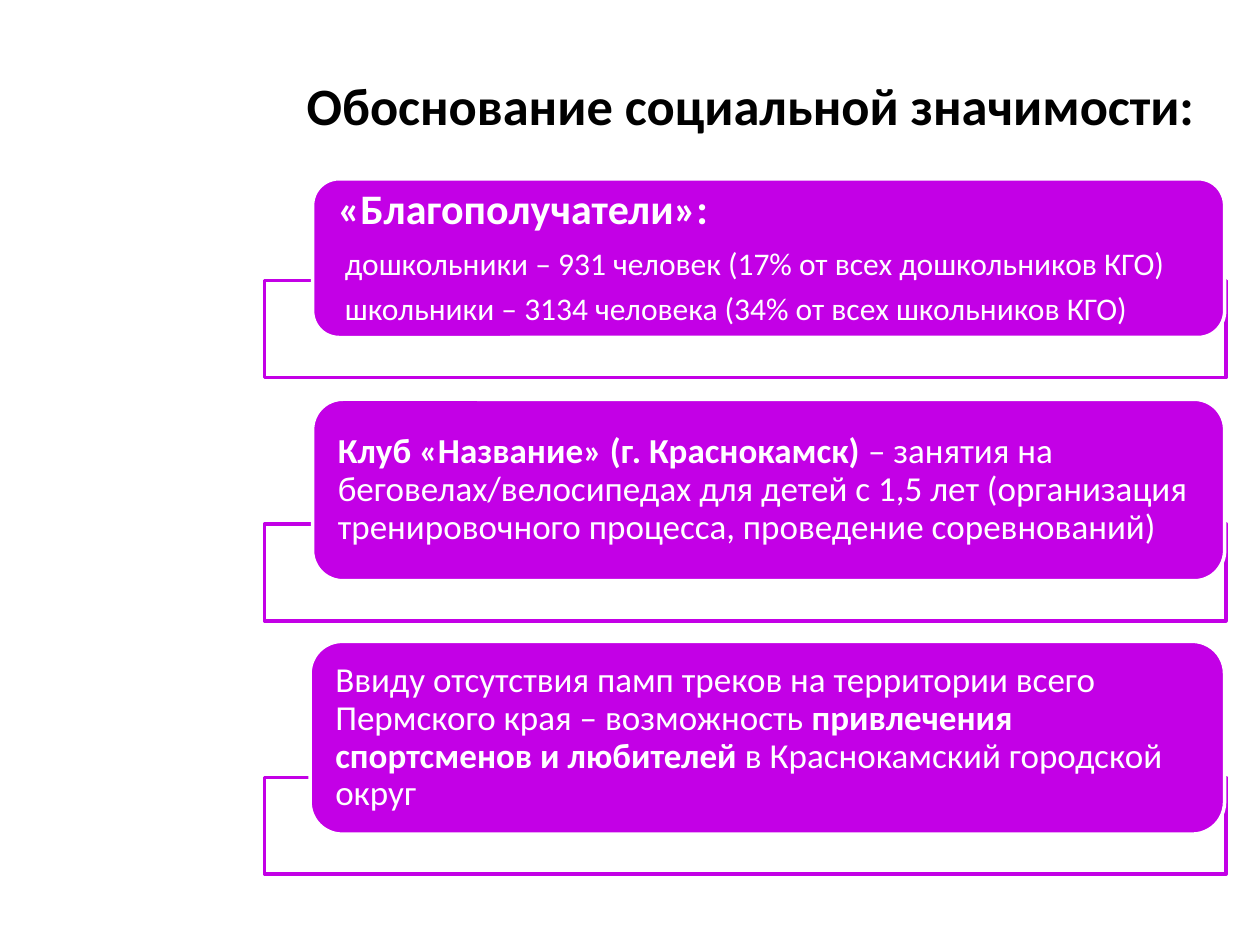
from pptx import Presentation
from pptx.dml.color import RGBColor
from pptx.enum.shapes import MSO_SHAPE as Shape
from pptx.enum.text import MSO_ANCHOR as Anchor, PP_ALIGN as Align
from pptx.util import Pt

COLORS = {"purple": "C300E6", "white": "FFFFFF", "black": "000000"}
FONT = "Calibri"
FRAME_LEFT, FRAME_WIDTH, FRAME_HEIGHT = 151.2, 549.4, 55.4
CARD_RIGHT = 699.8
FRAME_DROP = 22.9  # frame bottom below card bottom
TEXT_MARGIN = 14.4
CORNER = 0.16667

# Each card: left, top, height, paragraphs of (size, [(text, bold), ...])
CARDS = [
    (178.6, 102.2, 90.7, [
        (24, [("«Благополучатели»:", True)]),
        (18, [(" дошкольники – 931 человек (17% от всех дошкольников КГО)", False)]),
        (18, [(" школьники – 3134 человека (34% от всех школьников КГО)", False)]),
    ]),
    (178.6, 228.2, 103.7, [
        (20, [("Клуб «Название» (г. Краснокамск) ", True),
              ("– занятия на беговелах/велосипедах для детей с 1,5 лет "
               "(организация тренировочного процесса, проведение соревнований)", False)]),
    ]),
    (177.2, 366.5, 110.2, [
        (20, [("Ввиду отсутствия памп треков на территории всего "
               "Пермского края – возможность ", False),
              ("привлечения спортсменов и любителей", True),
              (" в Краснокамский городской округ", False)]),
    ]),
]


def color(name):
    return RGBColor.from_string(COLORS[name])


def style_span(span, size, bold, tint):
    span.font.name = FONT
    span.font.size = Pt(size)
    span.font.bold = bold
    span.font.color.rgb = color(tint)


def add_box(page, kind, left, top, width, height, fill, line):
    box = page.shapes.add_shape(kind, Pt(left), Pt(top), Pt(width), Pt(height))
    box.shadow.inherit = False
    box.fill.solid()
    box.fill.fore_color.rgb = color(fill)
    box.line.color.rgb = color(line)
    box.line.width = Pt(2)
    return box


def fill_text(box, paragraphs, margin):
    frame = box.text_frame
    frame.word_wrap = True
    frame.vertical_anchor = Anchor.MIDDLE
    frame.margin_left = frame.margin_right = Pt(margin)
    frame.margin_top = frame.margin_bottom = 0
    for index, (size, spans) in enumerate(paragraphs):
        para = frame.add_paragraph() if index else frame.paragraphs[0]
        para.alignment = Align.LEFT
        para.line_spacing = 0.9
        para.space_after = Pt(0.35 * size)
        for text, bold in spans:
            span = para.add_run()
            span.text = text
            style_span(span, size, bold, "white")


def add_title(page, text):
    title = page.shapes.title
    title.left, title.top, title.width, title.height = Pt(156.2), Pt(31.7), Pt(545.8), Pt(56.2)
    title.text_frame.text = text
    title.text_frame.vertical_anchor = Anchor.MIDDLE
    para = title.text_frame.paragraphs[0]
    para.alignment = Align.CENTER
    style_span(para.runs[0], 30, True, "black")


def add_card(page, left, top, height, paragraphs):
    # Outline frame behind the lower half of the card
    frame_top = top + height + FRAME_DROP - FRAME_HEIGHT
    add_box(page, Shape.RECTANGLE, FRAME_LEFT, frame_top,
            FRAME_WIDTH, FRAME_HEIGHT, "white", "purple")
    card = add_box(page, Shape.ROUNDED_RECTANGLE, left, top,
                   CARD_RIGHT - left, height, "purple", "white")
    # Rounded corners already push the text inwards
    fill_text(card, paragraphs, TEXT_MARGIN - 0.29 * CORNER * height)


def main():
    deck = Presentation()
    deck.slide_width, deck.slide_height = Pt(720), Pt(540)
    page = deck.slides.add_slide(deck.slide_layouts[5])
    add_title(page, "Обоснование социальной значимости:")
    for card in CARDS:
        add_card(page, *card)
    deck.save("out.pptx")


if __name__ == "__main__":
    main()
